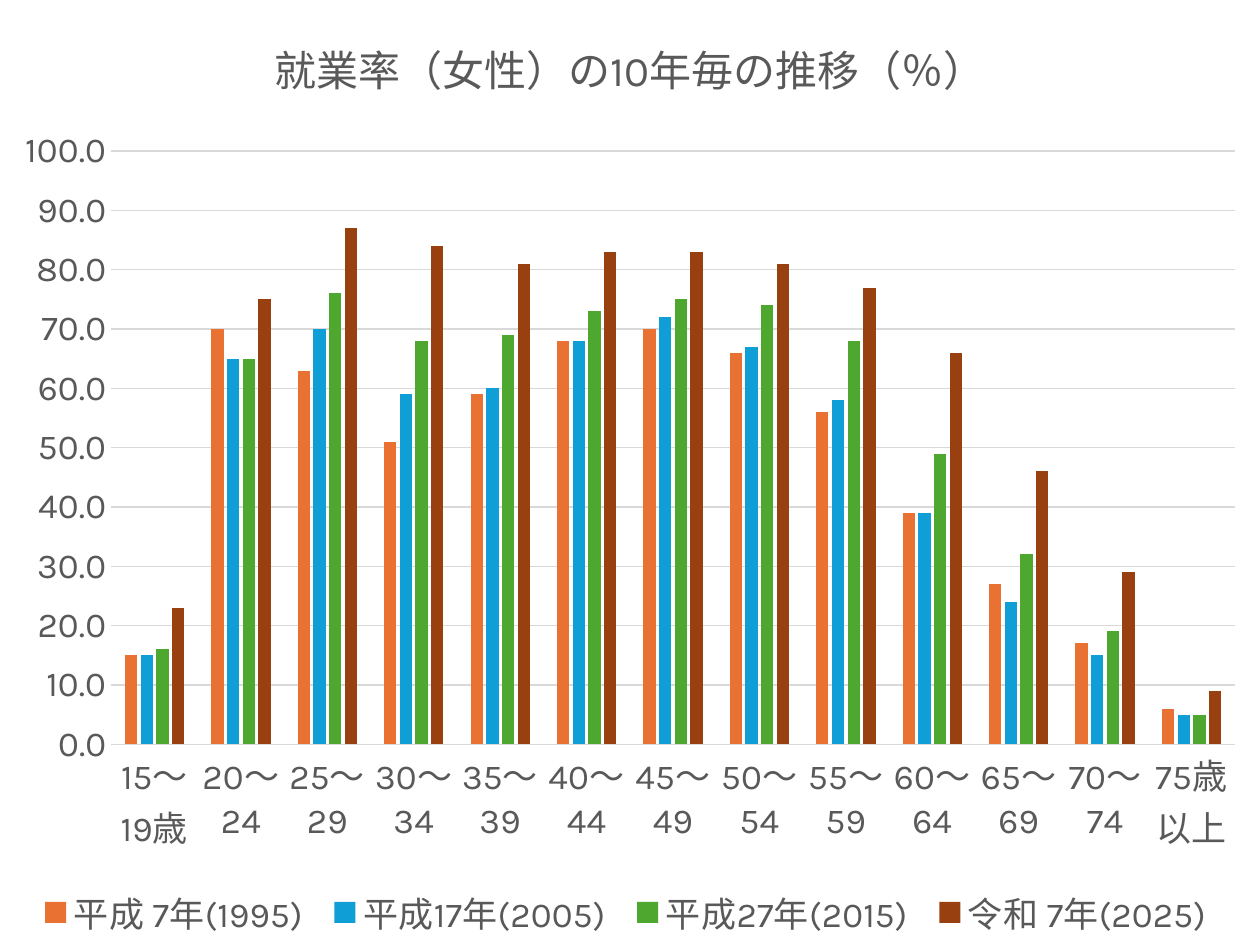
"""Builds a slide with a column chart of women's employment rate by age group."""
from pptx import Presentation
from pptx.chart.data import CategoryChartData
from pptx.dml.color import RGBColor
from pptx.enum.chart import XL_CHART_TYPE, XL_LEGEND_POSITION, XL_TICK_MARK
from pptx.util import Inches, Pt

CLUSTERED = XL_CHART_TYPE.COLUMN_CLUSTERED
BOTTOM = XL_LEGEND_POSITION.BOTTOM
NO_TICK = XL_TICK_MARK.NONE
FONT = "Karla"
TEXT_GREY = "595959"
LINE_GREY = "D9D9D9"


def rgb(value):
    return RGBColor.from_string(value)


def style_font(font, size):
    font.name = FONT
    font.size = Pt(size)
    font.bold = False
    font.color.rgb = rgb(TEXT_GREY)


age_groups = ["15～19歳"]
age_groups += [f"{age}～{age + 4}" for age in range(20, 75, 5)]
age_groups.append("75歳以上")

survey_years = [
    ("平成 7年(1995) ", "E97132", [15, 70, 63, 51, 59, 68, 70, 66, 56, 39, 27, 17, 6]),
    ("平成17年(2005) ", "0F9ED5", [15, 65, 70, 59, 60, 68, 72, 67, 58, 39, 24, 15, 5]),
    ("平成27年(2015) ", "4EA72E", [16, 65, 76, 68, 69, 73, 75, 74, 68, 49, 32, 19, 5]),
    ("令和 7年(2025) ", "994010", [23, 75, 87, 84, 81, 83, 83, 81, 77, 66, 46, 29, 9]),
]

prs = Presentation()
prs.slide_width = Inches(10)
prs.slide_height = Inches(7.5)
slide = prs.slides.add_slide(prs.slide_layouts[6])

employment = CategoryChartData(number_format="0.0")
employment.categories = age_groups
for year, color, rates in survey_years:
    employment.add_series(year, rates)

chart = slide.shapes.add_chart(
    CLUSTERED, Inches(0), Inches(0), Inches(10), Inches(7.5), employment
).chart
style_font(chart.font, 20)

chart.has_title = True
heading = chart.chart_title.text_frame.paragraphs[0].add_run()
heading.text = "就業率（女性）の10年毎の推移（％）"
style_font(heading.font, 24)
chart.chart_title.include_in_layout = False

chart.has_legend = True
chart.legend.position = BOTTOM
chart.legend.include_in_layout = False
style_font(chart.legend.font, 20)

columns = chart.plots[0]
columns.gap_width = 219
columns.overlap = -27
columns.vary_by_categories = False
for series, (year, color, rates) in zip(columns.series, survey_years):
    series.format.fill.solid()
    series.format.fill.fore_color.rgb = rgb(color)
    series.invert_if_negative = False

age_axis = chart.category_axis
rate_axis = chart.value_axis
for axis in (age_axis, rate_axis):
    axis.major_tick_mark = NO_TICK
    axis.minor_tick_mark = NO_TICK
    style_font(axis.tick_labels.font, 20)

rate_axis.minimum_scale = 0
rate_axis.maximum_scale = 100
rate_axis.major_unit = 10
rate_axis.tick_labels.number_format = "0.0"
rate_axis.tick_labels.number_format_is_linked = False
rate_axis.format.line.fill.background()
rate_axis.has_major_gridlines = True

for line in (age_axis.format.line, rate_axis.major_gridlines.format.line):
    line.color.rgb = rgb(LINE_GREY)
    line.width = Pt(0.75)

prs.save("out.pptx")
